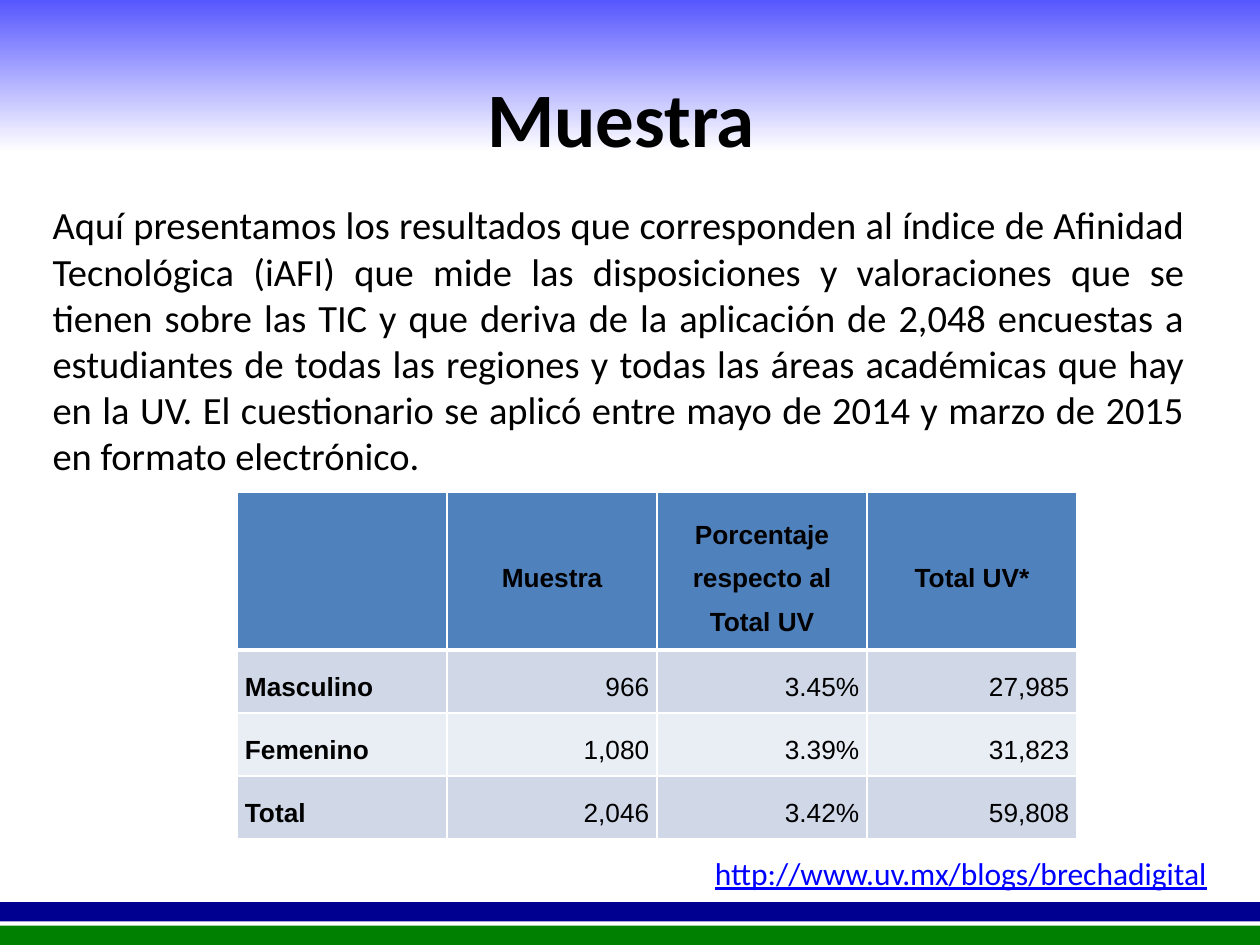
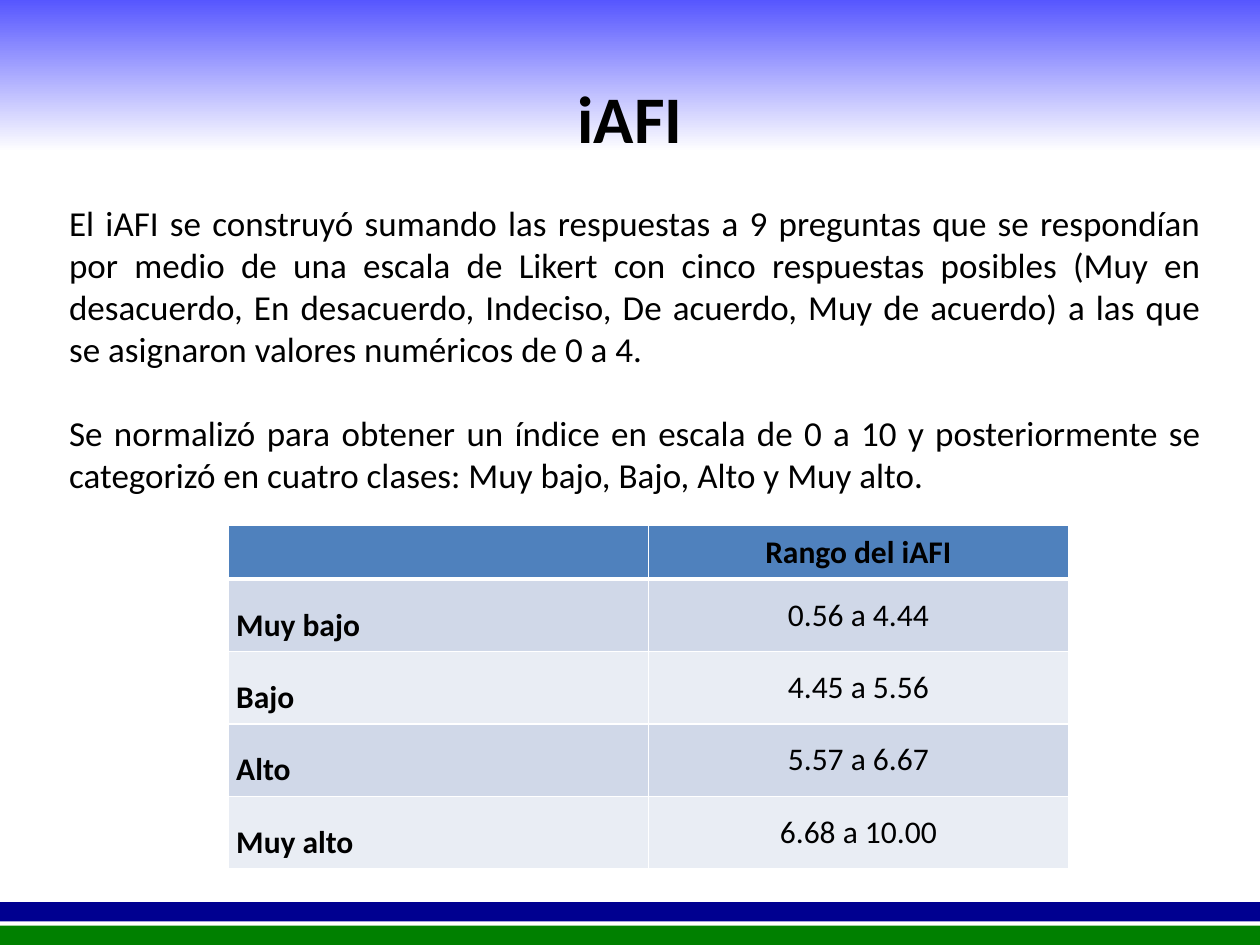
from lxml import etree
from pptx import Presentation
from pptx.dml.color import RGBColor
from pptx.enum.shapes import MSO_SHAPE
from pptx.enum.text import MSO_ANCHOR, PP_ALIGN
from pptx.oxml.ns import qn
from pptx.util import Pt

RECTANGLE = MSO_SHAPE.RECTANGLE
TOP, MIDDLE = MSO_ANCHOR.TOP, MSO_ANCHOR.MIDDLE
LEFT, CENTER = PP_ALIGN.LEFT, PP_ALIGN.CENTER
RIGHT, JUSTIFY = PP_ALIGN.RIGHT, PP_ALIGN.JUSTIFY

BLACK, WHITE, BLUE = "000000", "FFFFFF", "0000FF"
NAVY, GREEN = "000090", "008000"
HEADER_FILL = "4F81BD"
ROW_FILLS = ("D0D8E8", "E9EDF4")
PAGE_WIDTH, PAGE_HEIGHT = 720, 540
TABLE_WIDTH = 480
CELL_INSET = 4.5


def color(value):
    return RGBColor.from_string(value)


class SlideMaker:
    """Holds the shared style and the current page."""

    def __init__(self, deck):
        self.deck = deck
        self.page = None

    def new_page(self, title, title_size):
        self.page = self.deck.slides.add_slide(self.deck.slide_layouts[6])
        # Footer stripes and fading header band
        for top, stripe in ((515.5, NAVY), (529, GREEN)):
            self.band(top, 11).solid()
            self.page.shapes[-1].fill.fore_color.rgb = color(stripe)
        fade = self.band(-44.5, 170.5)
        fade.gradient()
        fade.gradient_angle = 270
        for stop, (position, shade) in zip(fade.gradient_stops, ((0, BLUE), (0.77, WHITE))):
            stop.position = position
            stop.color.rgb = color(shade)
        # Title
        self.text([title], (36, 21.6, 648, 90), title_size, CENTER, MIDDLE, bold=True)

    def band(self, top, height):
        shape = self.page.shapes.add_shape(RECTANGLE, 0, Pt(top), Pt(PAGE_WIDTH), Pt(height))
        shape.shadow.inherit = False
        shape.line.fill.background()
        return shape.fill

    def text(self, lines, place, size, align, anchor=TOP, bold=False, shade=BLACK,
             underline=False, gap=0):
        box = self.page.shapes.add_textbox(*(Pt(length) for length in place))
        frame = box.text_frame
        frame.word_wrap = True
        frame.vertical_anchor = anchor
        frame.text = "\n".join(lines)
        for index, para in enumerate(frame.paragraphs):
            para.space_before = Pt(gap if index else 0)
            self.format(para, size, "Calibri", align, bold, shade)
            para.runs[0].font.underline = underline

    def format(self, para, size, font_name, align, bold, shade=BLACK):
        para.alignment = align
        for span in para.runs:
            span.font.size = Pt(size)
            span.font.name = font_name
            span.font.bold = bold
            span.font.color.rgb = color(shade)

    def borders(self, cell, top_width, bottom_width):
        properties = cell._tc.get_or_add_tcPr()
        widths = {"a:lnL": 1, "a:lnR": 1, "a:lnT": top_width, "a:lnB": bottom_width}
        for tag, width in widths.items():
            line = etree.SubElement(properties, qn(tag), w=str(Pt(width)))
            fill = etree.SubElement(line, qn("a:solidFill"))
            etree.SubElement(fill, qn("a:srgbClr"), val=WHITE)

    def table(self, rows, left, top, header_height, row_height, size, font_name,
              value_align, body_anchor, value_spacing):
        heights = [header_height] + [row_height] * (len(rows) - 1)
        columns = len(rows[0])
        table = self.page.shapes.add_table(
            len(rows), columns, Pt(left), Pt(top), Pt(TABLE_WIDTH), Pt(sum(heights))).table
        table.first_row = table.horz_banding = False
        for column in table.columns:
            column.width = Pt(TABLE_WIDTH / columns)
        for r, values in enumerate(rows):
            header = r == 0
            table.rows[r].height = Pt(heights[r])
            for c, value in enumerate(values):
                cell = table.cell(r, c)
                self.borders(cell, 3 if r == 1 else 1, 3 if header else 1)
                cell.fill.solid()
                cell.fill.fore_color.rgb = color(HEADER_FILL if header else ROW_FILLS[(r - 1) % 2])
                cell.margin_left = cell.margin_right = Pt(CELL_INSET)
                cell.margin_top = cell.margin_bottom = Pt(CELL_INSET)
                cell.vertical_anchor = MIDDLE if header else body_anchor
                if not value:
                    continue
                cell.text_frame.text = value
                para = cell.text_frame.paragraphs[0]
                row_label = c == 0
                align = CENTER if header else JUSTIFY if row_label else value_align
                para.line_spacing = 1.5 if row_label else value_spacing
                self.format(para, size, font_name, align, header or row_label)


def sample_page(maker):
    maker.new_page("Muestra ", 44)
    maker.text(
        ["Aquí presentamos los resultados que corresponden al índice de Afinidad Tecnológica "
         "(iAFI) que mide las disposiciones y valoraciones que se tienen sobre las TIC y que "
         "deriva de la aplicación de 2,048 encuestas a estudiantes de todas las regiones y todas "
         "las áreas académicas que hay en la UV. El cuestionario se aplicó entre mayo de 2014 y "
         "marzo de 2015 en formato electrónico."],
        (23, 111.6, 661, 167), 22, JUSTIFY)
    maker.text(["http://www.uv.mx/blogs/brechadigital"], (401.5, 484.5, 310.5, 29), 18, LEFT,
               shade=BLUE, underline=True)
    maker.table(
        [("", "Muestra", "Porcentaje respecto al Total UV", "Total UV*"),
         ("Masculino", "966", "3.45%", "27,985"),
         ("Femenino", "1,080", "3.39%", "31,823"),
         ("Total", "2,046", "3.42%", "59,808")],
        135.5, 281.5, 89, 35, 15, "Arial", RIGHT, TOP, 1.5)


def index_page(maker):
    maker.new_page("iAFI", 38)
    maker.text(
        ["El iAFI se construyó sumando las respuestas a 9 preguntas que se respondían por medio "
         "de una escala de Likert con cinco respuestas posibles (Muy en desacuerdo, En "
         "desacuerdo, Indeciso, De acuerdo, Muy de acuerdo) a las que se asignaron valores "
         "numéricos de 0 a 4.",
         "Se normalizó para obtener un índice en escala de 0 a 10 y posteriormente se categorizó "
         "en cuatro clases: Muy bajo, Bajo, Alto y Muy alto."],
        (32.4, 111.6, 661, 177), 20, JUSTIFY, gap=24)
    maker.table(
        [("", "Rango del iAFI"),
         ("Muy bajo", "0.56 a 4.44"),
         ("Bajo", "4.45 a 5.56"),
         ("Alto", "5.57 a 6.67"),
         ("Muy alto", "6.68 a 10.00")],
        130.5, 300.3, 29, 40.5, 18, "Calibri", CENTER, MIDDLE, 1.0)


def main():
    deck = Presentation()
    deck.slide_width, deck.slide_height = Pt(PAGE_WIDTH), Pt(PAGE_HEIGHT)
    maker = SlideMaker(deck)
    sample_page(maker)
    index_page(maker)
    deck.save("out.pptx")


if __name__ == "__main__":
    main()
